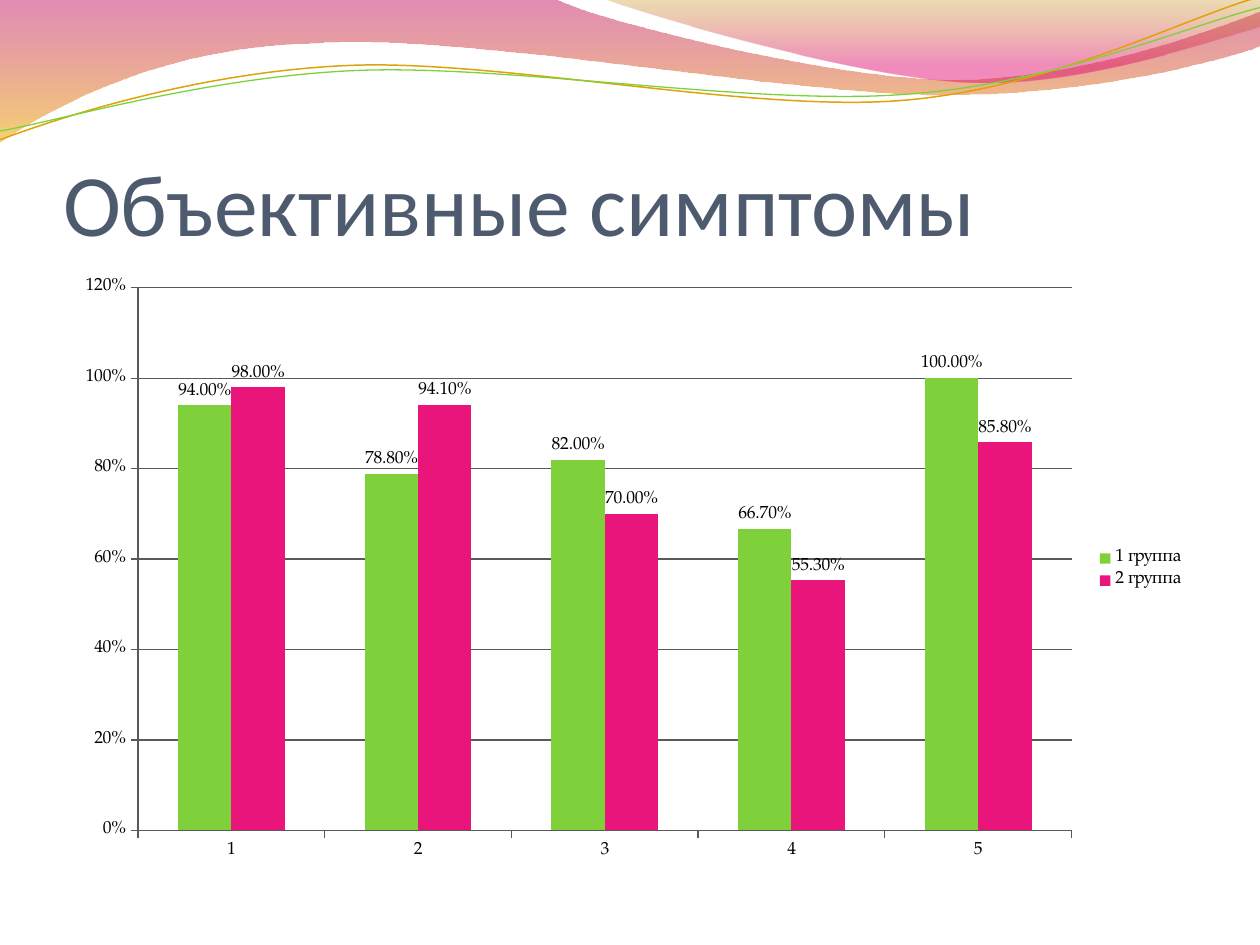
"""Build a slide comparing objective symptoms in two groups under a wavy header."""
from dataclasses import dataclass

from lxml.etree import SubElement
from pptx import Presentation
from pptx.chart.data import CategoryChartData
from pptx.dml.color import RGBColor
from pptx.enum.chart import XL_CHART_TYPE, XL_LABEL_POSITION, XL_LEGEND_POSITION, XL_TICK_MARK
from pptx.enum.text import MSO_ANCHOR, MSO_AUTO_SIZE, PP_ALIGN
from pptx.oxml.ns import qn
from pptx.util import Inches, Pt


@dataclass(frozen=True)
class Theme:
    title_font: str = "Calibri"
    chart_font: str = "TeX Gyre Pagella"
    title_size: int = 50
    chart_size: int = 10
    title: str = "4E5B6F"
    text: str = "000000"
    axis: str = "595959"
    green: str = "7FD13B"
    pink: str = "EA157A"
    gold: str = "E0A209"
    band_left: tuple = ((0, "BD0059", 45), (1, "F0AB00", 55))
    band_right: tuple = ((0, "C38B00", 30), (0.8, "E1006B", 45))


def add_wave(shapes, segments, closed):
    corners = [(Inches(segment[-2]), Inches(segment[-1])) for segment in segments]
    builder = shapes.build_freeform(*corners[0])
    builder.add_line_segments(corners[1:], close=closed)
    wave = builder.convert_to_shape()
    wave.shadow.inherit = False
    sides = list(wave.element.iter(qn("a:lnTo")))
    for side, segment in zip(sides, segments[1:]):
        if len(segment) == 6:
            side.tag = qn("a:cubicBezTo")
            for index, start in enumerate((0, 2)):
                handle = side.makeelement(qn("a:pt"), {
                    "x": str(Inches(segment[start]) - wave.left),
                    "y": str(Inches(segment[start + 1]) - wave.top),
                })
                side.insert(index, handle)
    return wave


theme = Theme()
deck = Presentation()
deck.slide_width, deck.slide_height = Inches(10), Inches(7.5)
page = deck.slides.add_slide(deck.slide_layouts[5])

bands = [
    (theme.band_left, [
        (0, 0), (4.4, -0.01),
        (4.76, 0.17, 6.64, 0.63, 7.58, 0.63), (8.53, 0.63, 9.58, 0.26, 10, 0.09),
        (10.01, 0.36),
        (9.83, 0.44, 8.7, 0.76, 7.46, 0.75), (6.22, 0.75, 3.82, 0.28, 2.57, 0.34),
        (1.29, 0.36, 0.46, 0.83, -0.01, 1.13),
    ]),
    (theme.band_right, [
        (4.79, -0.01),
        (5.09, 0.11, 6.82, 0.62, 7.69, 0.65), (8.56, 0.69, 9.61, 0.32, 10, 0.21),
        (10, 0),
    ]),
]
for stops, segments in bands:
    band = add_wave(page.shapes, segments, closed=True)
    band.line.fill.background()
    band.fill.gradient()
    band.fill.gradient_angle = 270
    for stop, (position, color, _) in zip(band.fill.gradient_stops, stops):
        stop.position = position
        stop.color.rgb = RGBColor.from_string(color)
    gradient = band.element.spPr.find(qn("a:gradFill"))
    for color_node, (_, _, opacity) in zip(gradient.iter(qn("a:srgbClr")), stops):
        SubElement(color_node, qn("a:alpha")).set("val", str(opacity * 1000))

strands = [
    (theme.gold, 0.85, [
        (0, 1.11), (0.48, 0.93, 1.58, 0.57, 2.77, 0.52),
        (3.95, 0.47, 5.93, 0.89, 7.13, 0.8), (8.33, 0.71, 9.38, 0.15, 9.98, -0.02),
    ]),
    (theme.green, 0.75, [
        (0, 1.04), (0.47, 0.96, 1.64, 0.61, 2.83, 0.56),
        (4.03, 0.51, 5.97, 0.84, 7.17, 0.75), (8.36, 0.67, 9.41, 0.21, 10, 0.06),
    ]),
]
for color, width, segments in strands:
    strand = add_wave(page.shapes, segments, closed=False)
    strand.fill.background()
    strand.line.color.rgb = RGBColor.from_string(color)
    strand.line.width = Pt(width)

title = page.shapes.title
title.left, title.top = Inches(0.5), Inches(0.77)
title.width, title.height = Inches(9), Inches(1.25)
frame = title.text_frame
frame.word_wrap = True
frame.auto_size = MSO_AUTO_SIZE.NONE
frame.vertical_anchor = MSO_ANCHOR.BOTTOM
frame.margin_left = frame.margin_right = frame.margin_bottom = 0
frame.margin_top = Inches(0.05)
para = frame.paragraphs[0]
para.alignment = PP_ALIGN.LEFT
span = para.add_run()
span.text = "Объективные симптомы"
span.font.name = theme.title_font
span.font.size = Pt(theme.title_size)
span.font.color.rgb = RGBColor.from_string(theme.title)

data = CategoryChartData(number_format="0.00%")
data.categories = ["1", "2", "3", "4", "5"]
data.add_series("1 группа", (0.94, 0.788, 0.82, 0.667, 1))
data.add_series("2 группа", (0.98, 0.941, 0.7, 0.553, 0.858))
chart = page.shapes.add_chart(
    XL_CHART_TYPE.COLUMN_CLUSTERED, Inches(0.5), Inches(2.12), Inches(9), Inches(4.8), data
).chart
chart.has_title = False
chart.font.name = theme.chart_font
chart.font.size = Pt(theme.chart_size)
chart.font.color.rgb = RGBColor.from_string(theme.text)
chart.has_legend = True
chart.legend.position = XL_LEGEND_POSITION.RIGHT
chart.legend.include_in_layout = False

plot = chart.plots[0]
plot.gap_width, plot.overlap = 150, 0
plot.vary_by_categories = False
for series, color in zip(plot.series, (theme.green, theme.pink)):
    series.format.fill.solid()
    series.format.fill.fore_color.rgb = RGBColor.from_string(color)
    labels = series.data_labels
    labels.show_value = True
    labels.position = XL_LABEL_POSITION.OUTSIDE_END
    labels.number_format = "0.00%"
    labels.number_format_is_linked = False

values = chart.value_axis
values.minimum_scale, values.maximum_scale, values.major_unit = 0, 1.2, 0.2
values.has_major_gridlines = True
values.tick_labels.number_format = "0%"
values.tick_labels.number_format_is_linked = False
for axis in (values, chart.category_axis):
    axis.major_tick_mark = XL_TICK_MARK.OUTSIDE
    axis.minor_tick_mark = XL_TICK_MARK.NONE
for line in (values.format.line, chart.category_axis.format.line, values.major_gridlines.format.line):
    line.color.rgb = RGBColor.from_string(theme.axis)
    line.width = Pt(0.75)

deck.save("out.pptx")
